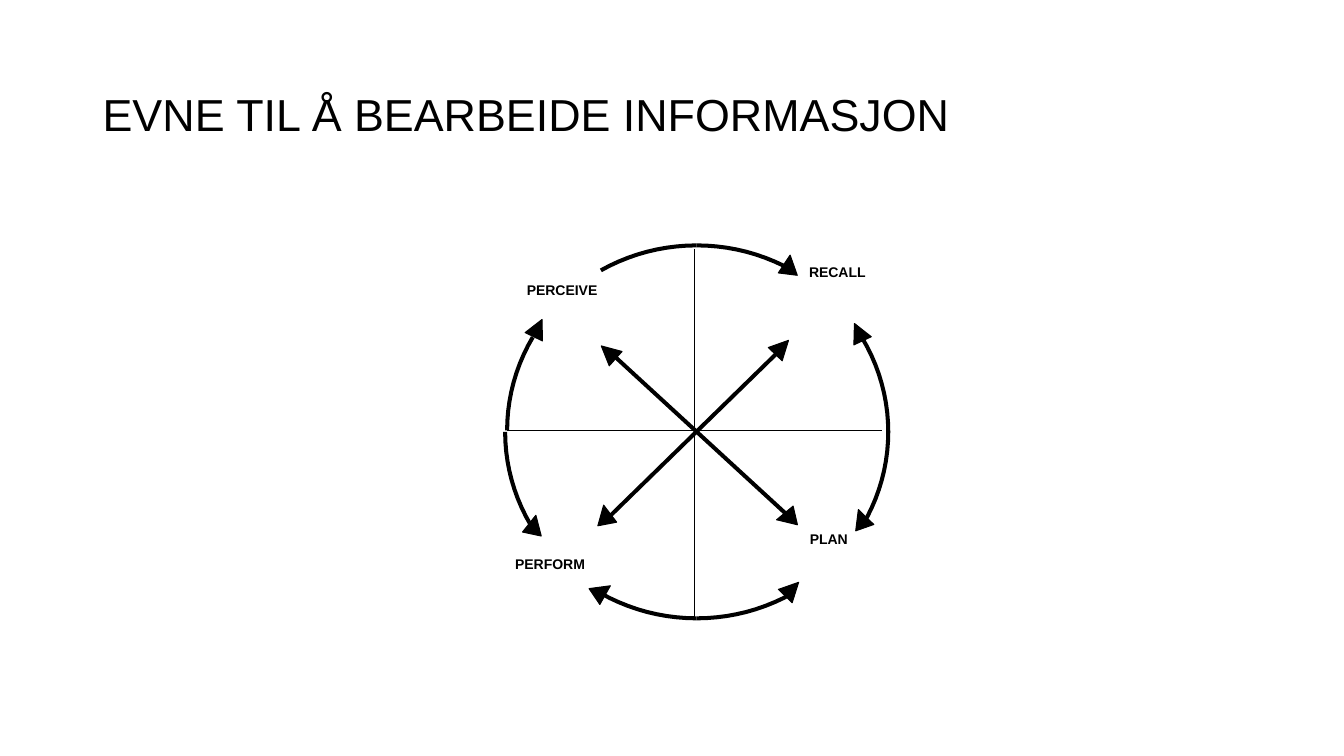
import math
from dataclasses import dataclass

from lxml import etree
from pptx import Presentation
from pptx import util as u
from pptx.dml.color import RGBColor
from pptx.enum import shapes, text
from pptx.oxml.ns import qn
from pptx.shapes.base import BaseShape
from pptx.slide import Slide

Point = tuple[float, float]


@dataclass(frozen=True)
class Theme:
    ink: RGBColor = RGBColor(0, 0, 0)
    font: str = "Arial"
    title_size: float = 32
    label_size: float = 10
    hairline: float = 0.75
    band: float = 0.04


@dataclass(frozen=True)
class Label:
    words: str
    left: float
    top: float
    width: float
    height: float = 0.8


@dataclass(frozen=True)
class Arc:
    start: float
    centre: Point = (6.91, 4.285)


@dataclass(frozen=True)
class Arrowhead:
    left: float
    top: float
    rotation: float


@dataclass(frozen=True)
class Line:
    start: Point
    end: Point


THEME = Theme()
OUTER_RADII: Point = (1.92, 1.87)
ARC_SPAN = 30
ARC_STEPS = 10
HEAD_SIZE = 0.19

TITLE = Label("EVNE TIL Å BEARBEIDE INFORMASJON", 0.92, 0.4, 11.5, 1.45)
LABELS = [
    Label("PERCEIVE", 3.91, 2.74, 3.33),
    Label("RECALL", 6.91, 2.57, 2.79),
    Label("PLAN", 7.24, 5.21, 1.96),
    Label("PERFORM", 3.91, 5.46, 3.09),
]
ARCS = [Arc(start) for start in (0, 330, 270, 240, 150, 90, 60)]
ARCS.append(Arc(180, centre=(6.93, 4.27)))
DIAGONALS = [
    Line((7.71, 3.5), (6.03, 5.14)),
    Line((6.09, 3.53), (7.82, 5.12)),
]
ARROWHEADS = [
    Arrowhead(5.2, 5.11, 12.1),
    Arrowhead(5.24, 3.16, 25.6),
    Arrowhead(7.73, 2.53, 7.2),
    Arrowhead(8.42, 3.2, 334.9),
    Arrowhead(8.45, 5.05, 340.6),
    Arrowhead(7.76, 5.75, 44.1),
    Arrowhead(7.66, 3.35, 43.9),
    Arrowhead(5.91, 5.01, 349.2),
    Arrowhead(5.88, 5.77, 55.9),
    Arrowhead(5.94, 3.4, 311.7),
    Arrowhead(7.7, 5.04, 257),
]
AXES = [Line((6.89, 2.47), (6.89, 6.14)), Line((5.03, 4.27), (8.75, 4.27))]


def fill_with_ink(shape: BaseShape) -> None:
    shape.shadow.inherit = False
    shape.fill.solid()
    shape.fill.fore_color.rgb = THEME.ink


def add_outline(slide: Slide, points: list[Point]) -> None:
    corners = [(u.Inches(x), u.Inches(y)) for x, y in points]
    builder = slide.shapes.build_freeform(*corners[0])
    builder.add_line_segments(corners[1:], close=True)
    shape = builder.convert_to_shape()
    fill_with_ink(shape)
    shape.line.fill.background()


def add_arc(slide: Slide, arc: Arc) -> None:
    """Draw a curved band: along the outer edge and back along the inner one."""
    angles = [math.radians(arc.start + ARC_SPAN * step / ARC_STEPS)
              for step in range(ARC_STEPS + 1)]

    def edge(inset: float) -> list[Point]:
        return [(arc.centre[0] + (OUTER_RADII[0] - inset) * math.cos(angle),
                 arc.centre[1] + (OUTER_RADII[1] - inset) * math.sin(angle))
                for angle in angles]

    add_outline(slide, edge(0) + edge(THEME.band)[::-1])


def add_diagonal(slide: Slide, line: Line) -> None:
    (x1, y1), (x2, y2) = line.start, line.end
    scale = THEME.band / 2 / math.dist(line.start, line.end)
    dx, dy = (y1 - y2) * scale, (x2 - x1) * scale
    add_outline(slide, [(x1 + dx, y1 + dy), (x2 + dx, y2 + dy),
                        (x2 - dx, y2 - dy), (x1 - dx, y1 - dy)])


def add_arrowhead(slide: Slide, head: Arrowhead) -> None:
    shape = slide.shapes.add_shape(
        shapes.MSO_SHAPE.ISOSCELES_TRIANGLE, u.Inches(head.left),
        u.Inches(head.top), u.Inches(HEAD_SIZE), u.Inches(HEAD_SIZE))
    shape.rotation = head.rotation
    fill_with_ink(shape)
    shape.line.color.rgb = THEME.ink
    shape.line.width = u.Pt(THEME.hairline)


def add_axis(slide: Slide, line: Line) -> None:
    connector = slide.shapes.add_connector(
        shapes.MSO_CONNECTOR.STRAIGHT,
        *(u.Inches(value) for value in line.start + line.end))
    connector.line.color.rgb = THEME.ink
    connector.line.width = u.Pt(THEME.hairline)
    etree.SubElement(connector._element.spPr, qn("a:effectLst"))


def add_text(slide: Slide, label: Label, size: float, bold: bool,
             alignment: text.PP_ALIGN, anchor: text.MSO_ANCHOR) -> None:
    box = slide.shapes.add_textbox(
        u.Inches(label.left), u.Inches(label.top),
        u.Inches(label.width), u.Inches(label.height))
    frame = box.text_frame
    frame.word_wrap = True
    frame.vertical_anchor = anchor
    frame.text = label.words
    paragraph = frame.paragraphs[0]
    paragraph.alignment = alignment
    font = paragraph.runs[0].font
    font.name = THEME.font
    font.size = u.Pt(size)
    font.bold = bold
    font.color.rgb = THEME.ink


def main() -> None:
    presentation = Presentation()
    presentation.slide_width = u.Inches(13.33)
    presentation.slide_height = u.Inches(7.5)
    slide = presentation.slides.add_slide(presentation.slide_layouts[6])

    add_text(slide, TITLE, THEME.title_size, False,
             text.PP_ALIGN.LEFT, text.MSO_ANCHOR.MIDDLE)
    for arc in ARCS:
        add_arc(slide, arc)
    for label in LABELS:
        add_text(slide, label, THEME.label_size, True,
                 text.PP_ALIGN.CENTER, text.MSO_ANCHOR.TOP)
    for diagonal in DIAGONALS:
        add_diagonal(slide, diagonal)
    for head in ARROWHEADS:
        add_arrowhead(slide, head)
    for axis in AXES:
        add_axis(slide, axis)

    presentation.save("out.pptx")


if __name__ == "__main__":
    main()
